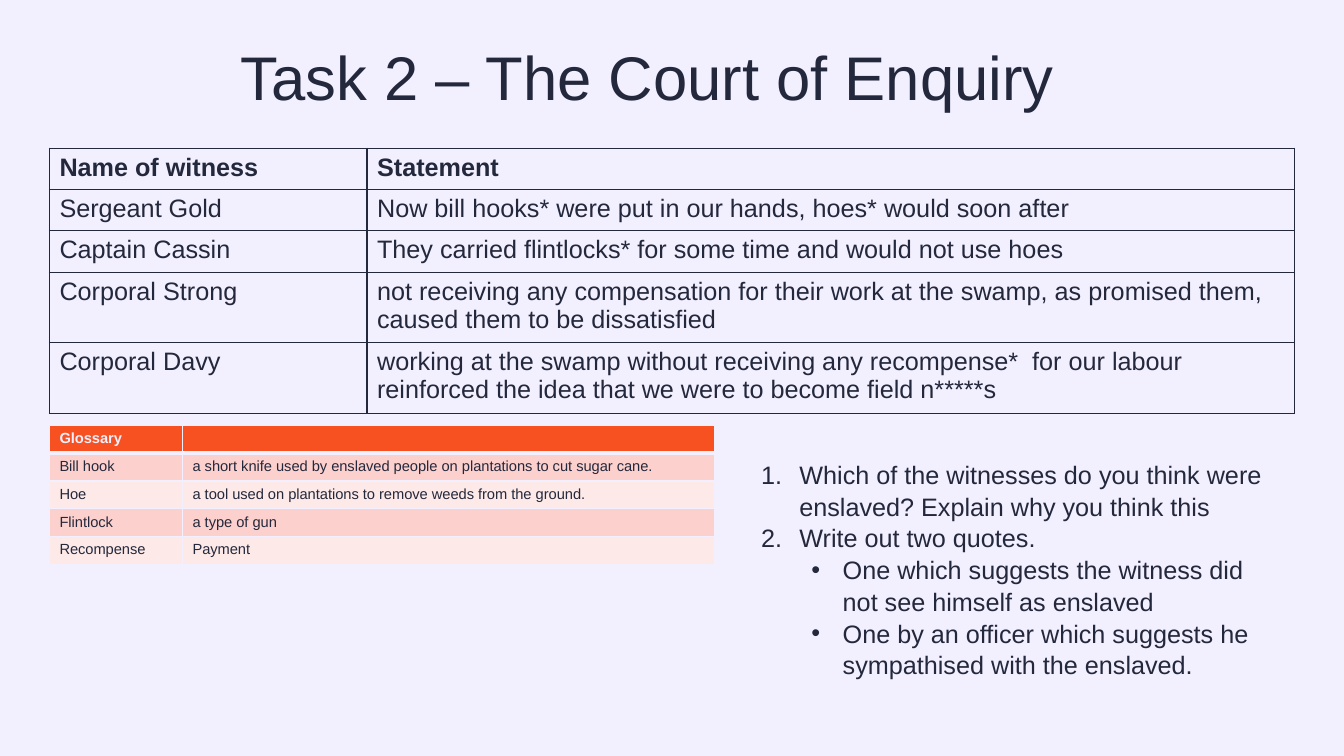
from lxml.etree import SubElement
from pptx import Presentation
from pptx.dml.color import RGBColor
from pptx.enum.text import MSO_AUTO_SIZE, PP_ALIGN
from pptx.oxml.ns import qn
from pptx.util import Inches, Pt

HUES = {"ink": "24283C", "paper": "F2F0FF", "head": "F75122",
        "dark": "FCD0CD", "light": "FDE9E8"}


class Deck:
    """Holds the style and the current slide."""

    def __init__(self, font):
        self.font = font
        self.prs = Presentation()
        self.prs.slide_width = Inches(13.33)
        self.prs.slide_height = Inches(7.5)
        self.slide = self.prs.slides.add_slide(self.prs.slide_layouts[6])
        self.paint(self.slide.background.fill, "paper")

    def paint(self, fill, hue):
        fill.solid()
        fill.fore_color.rgb = RGBColor.from_string(HUES[hue])

    def run(self, para, text, size, hue="ink", bold=False):
        run = para.add_run()
        run.text = text
        run.font.name = self.font
        run.font.size = Pt(size)
        run.font.bold = bold
        run.font.color.rgb = RGBColor.from_string(HUES[hue])

    def box(self, spot, wrap=True):
        frame = self.slide.shapes.add_textbox(*map(Inches, spot)).text_frame
        frame.word_wrap = wrap
        frame.auto_size = MSO_AUTO_SIZE.SHAPE_TO_FIT_TEXT
        return frame

    def title(self, spot, text, size):
        para = self.box(spot, wrap=False).paragraphs[0]
        para.alignment = PP_ALIGN.CENTER
        self.run(para, text, size)

    def list(self, spot, items, size):
        frame = self.box(spot)
        for i, (level, text) in enumerate(items):
            para = frame.add_paragraph() if i else frame.paragraphs[0]
            para.level = level
            para.line_spacing = 1.05
            left, hang = ((0.38, 0.38), (0.81, 0.31))[level]
            props = para._p.get_or_add_pPr()
            props.set("marL", str(Inches(left)))
            props.set("indent", str(-Inches(hang)))
            if level:
                SubElement(props, qn("a:buFont"), typeface=self.font)
                SubElement(props, qn("a:buChar"), char="•")
            else:
                SubElement(props, qn("a:buAutoNum"), type="arabicPeriod")
            self.run(para, text, size)

    def edge(self, cell, side, hue, width):
        line = SubElement(cell._tc.get_or_add_tcPr(), qn("a:ln" + side),
                          w=str(Pt(width)))
        fill = SubElement(line, qn("a:solidFill"))
        SubElement(fill, qn("a:srgbClr"), val=HUES[hue])

    def table(self, spot, cols, rows, size, line, head="ink", fills=None):
        """Draw a table; fills gives the header hue, then two band hues."""
        grid = self.slide.shapes.add_table(
            len(rows), len(cols), *map(Inches, spot)).table
        grid.horz_banding = grid.first_row = False
        for col, width in zip(grid.columns, cols):
            col.width = Inches(width)
        for r, row in enumerate(rows):
            for c, text in enumerate(row):
                cell = grid.cell(r, c)
                for side in "LRTB":
                    thick = fills and (r, side) in ((0, "B"), (1, "T"))
                    self.edge(cell, side, line, 3 if thick else 1)
                if fills:
                    self.paint(cell.fill, fills[2 - r % 2 if r else 0])
                else:
                    cell.fill.background()
                para = cell.text_frame.paragraphs[0]
                if text:
                    self.run(para, text, size, "ink" if r else head, r == 0)
                else:
                    SubElement(para._p, qn("a:endParaRPr"),
                               sz=str(int(size * 100)))
        return grid


deck = Deck("Arial")

# Title
deck.title((2.16, 0.34, 8.53, 0.84), "Task 2 – The Court of Enquiry", 44)

# Witness statements
facts = deck.table((0.49, 1.47, 12.35, 2.05), (3.15, 9.2), [
    ("Name of witness", "Statement"),
    ("Sergeant Gold",
     "Now bill hooks* were put in our hands, hoes* would soon after"),
    ("Captain Cassin",
     "They carried flintlocks* for some time and would not use hoes"),
    ("Corporal Strong",
     "not receiving any compensation for their work at the swamp, "
     "as promised them, caused them to be dissatisfied"),
    ("Corporal Davy",
     "working at the swamp without receiving any recompense*  for our "
     "labour reinforced the idea that we were to become field n*****s"),
], 18, "ink")
for r in (3, 4):
    facts.rows[r].height = Inches(0.7)

# Glossary
deck.table((0.49, 4.22, 6.6, 1.38), (1.32, 5.28), [
    ("Glossary", ""),
    ("Bill hook", "a short knife used by enslaved people on plantations "
                  "to cut sugar cane."),
    ("Hoe", "a tool used on plantations to remove weeds from the ground."),
    ("Flintlock", "a type of gun"),
    ("Recompense", "Payment"),
], 10.5, "paper", head="paper", fills=("head", "dark", "light"))

# Questions
deck.list((7.45, 4.49, 5.28, 2.22), [
    (0, "Which of the witnesses do you think were enslaved? "
        "Explain why you think this"),
    (0, "Write out two quotes."),
    (1, "One which suggests the witness did not see himself as enslaved"),
    (1, "One by an officer which suggests he sympathised with the enslaved."),
], 18)

deck.prs.save("out.pptx")
